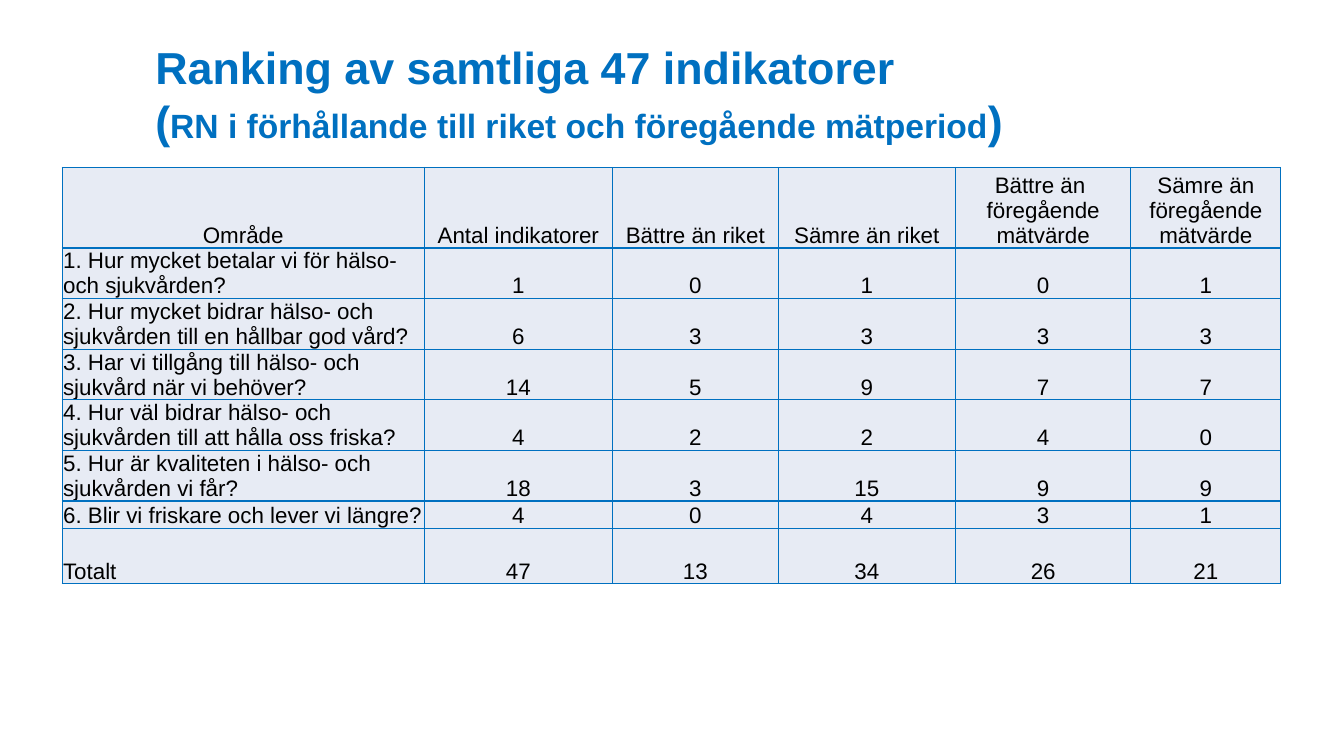
from lxml.etree import SubElement
from pptx import Presentation
from pptx.dml.color import RGBColor
from pptx.enum.text import MSO_ANCHOR as Anchor, MSO_AUTO_SIZE as AutoSize, PP_ALIGN as Align
from pptx.oxml.ns import qn
from pptx.util import Cm, Pt

COLORS = {"blue": "0070C0", "text": "000000", "cell": "E7EBF4"}
FONT = "Arial"

# Table content and measures in centimetres
HEADERS = ["Område", "Antal indikatorer", "Bättre än riket", "Sämre än riket",
           "Bättre än \nföregående\nmätvärde", "Sämre än föregående mätvärde"]
AREAS = [
    ("1. Hur mycket betalar vi för hälso- och sjukvården?", 1, 0, 1, 0, 1),
    ("2. Hur mycket bidrar hälso- och sjukvården till en hållbar god vård?", 6, 3, 3, 3, 3),
    ("3. Har vi tillgång till hälso- och sjukvård när vi behöver?", 14, 5, 9, 7, 7),
    ("4. Hur väl bidrar hälso- och sjukvården till att hålla oss friska?", 4, 2, 2, 4, 0),
    ("5. Hur är kvaliteten i hälso- och sjukvården vi får?", 18, 3, 15, 9, 9),
    ("6. Blir vi friskare och lever vi längre?", 4, 0, 4, 3, 1),
    ("Totalt", 47, 13, 34, 26, 21),
]
COLUMN_WIDTHS = [9.12, 4.75, 4.17, 4.47, 4.42, 3.78]
ROW_HEIGHTS = [2.03] + [1.27] * 5 + [0.69, 1.4]


def add_run(para, text, size, color, bold=False):
    run = para.add_run()
    run.text = text
    run.font.name = FONT
    run.font.size = Pt(size)
    run.font.bold = bold
    run.font.color.rgb = RGBColor.from_string(COLORS[color])


def add_title(page, left, top, width, height):
    title = page.shapes.title
    title.left, title.top, title.width, title.height = map(Cm, (left, top, width, height))
    frame = title.text_frame
    frame.word_wrap = True
    frame.auto_size = AutoSize.NONE
    frame.vertical_anchor = Anchor.BOTTOM
    para = frame.paragraphs[0]
    para.alignment = Align.LEFT
    add_run(para, "Ranking av samtliga 47 indikatorer ", 32, "blue", True)
    para.add_line_break()
    add_run(para, "(", 32, "blue", True)
    add_run(para, "RN i förhållande till riket och föregående mätperiod", 24, "blue", True)
    add_run(para, ")", 32, "blue", True)


def format_cell(cell):
    cell.vertical_anchor = Anchor.BOTTOM
    cell.margin_left = cell.margin_right = cell.margin_top = Cm(0.02)
    cell.margin_bottom = 0
    # Borders come before the fill in the cell properties
    properties = cell._tc.get_or_add_tcPr()
    for side in ("a:lnL", "a:lnR", "a:lnT", "a:lnB"):
        line = SubElement(properties, qn(side), w=str(Pt(1)))
        fill = SubElement(line, qn("a:solidFill"))
        SubElement(fill, qn("a:srgbClr"), val=COLORS["blue"])
    cell.fill.solid()
    cell.fill.fore_color.rgb = RGBColor.from_string(COLORS["cell"])


def add_ranking_table(page, left, top):
    rows = [HEADERS, *AREAS]
    table = page.shapes.add_table(
        len(rows), len(HEADERS), Cm(left), Cm(top),
        Cm(sum(COLUMN_WIDTHS)), Cm(sum(ROW_HEIGHTS))).table
    table.first_row = table.horz_banding = False
    for column, width in zip(table.columns, COLUMN_WIDTHS):
        column.width = Cm(width)
    for row, height in zip(table.rows, ROW_HEIGHTS):
        row.height = Cm(height)

    for row_index, values in enumerate(rows):
        for column_index, value in enumerate(values):
            cell = table.cell(row_index, column_index)
            format_cell(cell)
            is_area = row_index > 0 and column_index == 0
            for number, text in enumerate(str(value).split("\n")):
                frame = cell.text_frame
                para = frame.add_paragraph() if number else frame.paragraphs[0]
                para.alignment = Align.LEFT if is_area else Align.CENTER
                add_run(para, text, 16, "text")


def main():
    deck = Presentation()
    deck.slide_width, deck.slide_height = Cm(33.87), Cm(19.05)
    page = deck.slides.add_slide(deck.slide_layouts[5])
    add_title(page, 3.66, 0, 27.51, 3.84)
    add_ranking_table(page, 1.57, 4.22)
    deck.save("out.pptx")


if __name__ == "__main__":
    main()
